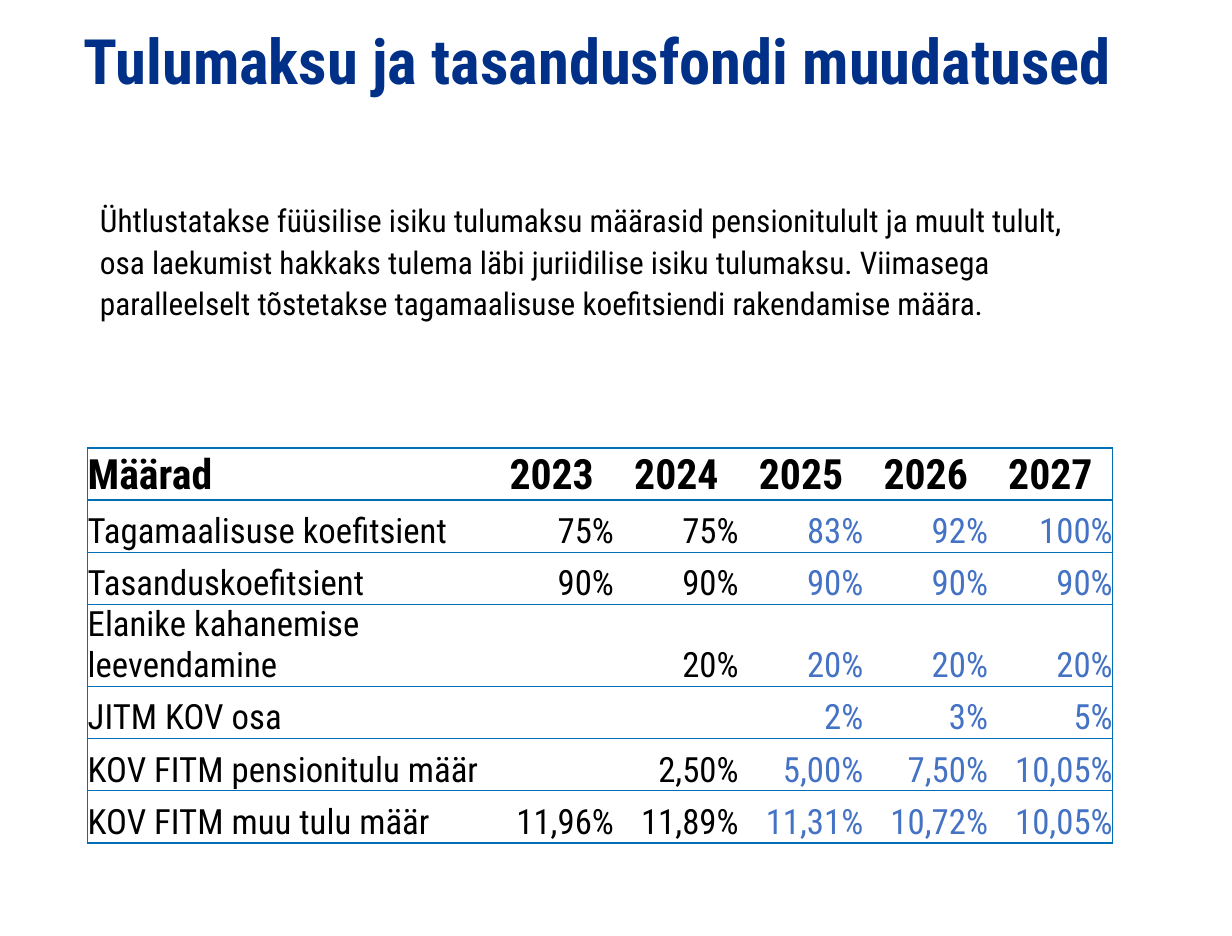
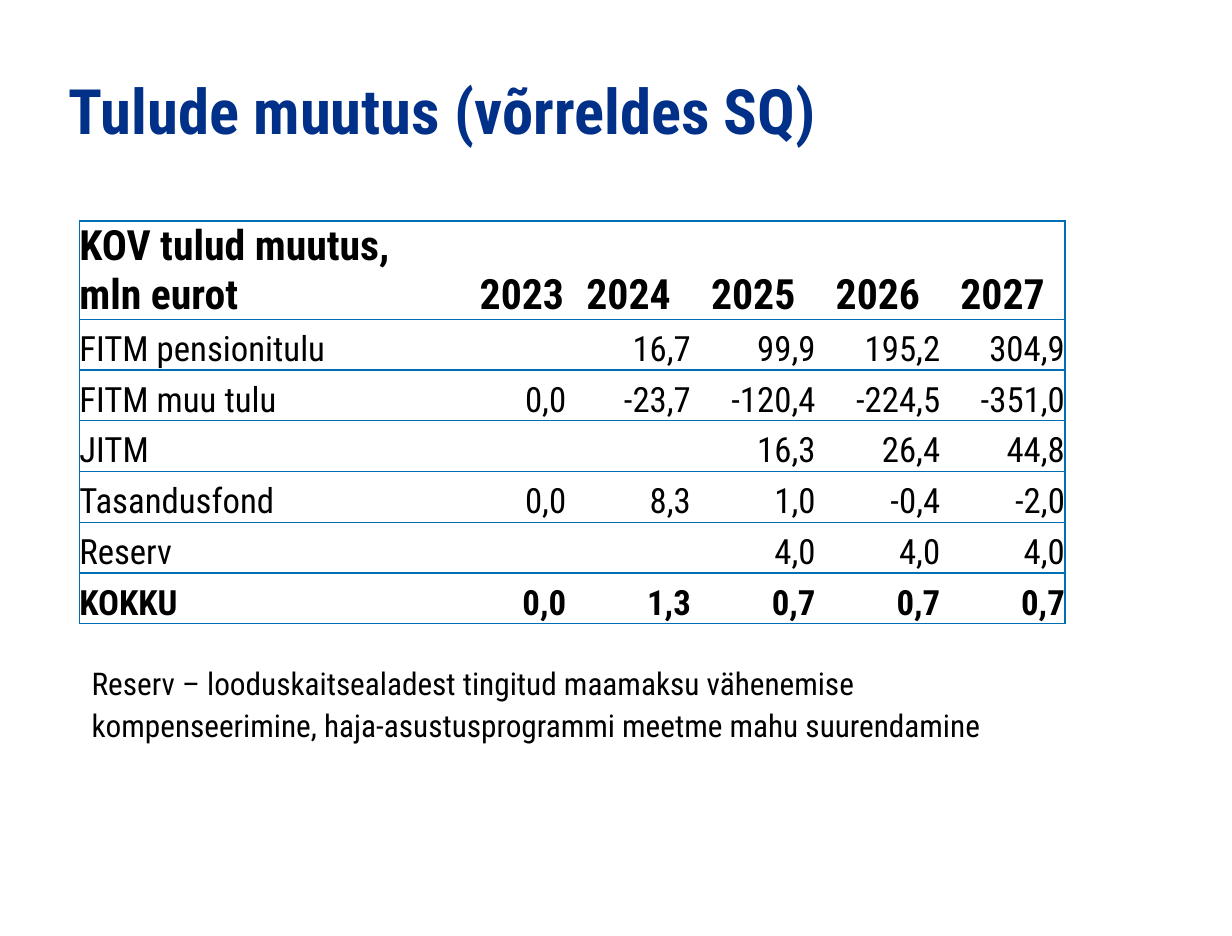
"""Build two slides on income tax and equalisation fund changes."""
from dataclasses import dataclass

from pptx import Presentation
from pptx.dml.color import RGBColor
from pptx.enum.text import MSO_ANCHOR, MSO_AUTO_SIZE, PP_ALIGN
from pptx.oxml.ns import qn
from pptx.slide import Slide
from pptx.table import _Cell
from pptx.text.text import TextFrame
from pptx.util import Emu, Pt
from lxml import etree

LEFT, CENTER, RIGHT = PP_ALIGN.LEFT, PP_ALIGN.CENTER, PP_ALIGN.RIGHT
TOP, BOTTOM = MSO_ANCHOR.TOP, MSO_ANCHOR.BOTTOM
NO_FIT, GROW = MSO_AUTO_SIZE.NONE, MSO_AUTO_SIZE.SHAPE_TO_FIT_TEXT
EMU_PER_PX = 3600
SLIDE_W, SLIDE_H = 2500, 1900
FONT = "Roboto Condensed"
NAVY, BLUE, RULE, BLACK, WHITE = "003087", "4472C4", "006EB5", "000000", "FFFFFF"
YEARS = ("2023", "2024", "2025", "2026", "2027")
TITLE_ONLY = 5


@dataclass(frozen=True)
class Box:
    """A rectangle in px."""
    x: int
    y: int
    w: int
    h: int


@dataclass(frozen=True)
class Style:
    """The look of a paragraph."""
    size: int
    color: str = BLACK
    bold: bool = False
    align: PP_ALIGN = LEFT
    spacing: float = 1.0


@dataclass(frozen=True)
class RateTable:
    """A table of yearly values with a label column."""
    x: int
    y: int
    columns: tuple[int, ...]
    row_height: int
    rows: tuple[tuple[str, ...], ...]
    forecast_from: int
    has_total: bool


@dataclass(frozen=True)
class Page:
    """The content of one slide."""
    title: str
    title_box: Box
    table: RateTable
    note: str
    note_box: Box


PAGES = (
    Page(
        "Tulumaksu ja tasandusfondi muudatused", Box(170, 50, 2200, 160),
        RateTable(178, 909, (815, 253, 253, 253, 253, 253), 106, (
            ("Määrad", *YEARS),
            ("Tagamaalisuse koefitsient", "75%", "75%", "83%", "92%", "100%"),
            ("Tasanduskoefitsient", "90%", "90%", "90%", "90%", "90%"),
            ("Elanike kahanemise leevendamine", "", "20%", "20%", "20%", "20%"),
            ("JITM KOV osa", "", "", "2%", "3%", "5%"),
            ("KOV FITM pensionitulu määr", "", "2,50%", "5,00%", "7,50%", "10,05%"),
            ("KOV FITM muu tulu määr", "11,96%", "11,89%", "11,31%", "10,72%", "10,05%"),
        ), forecast_from=3, has_total=False),
        "Ühtlustatakse füüsilise isiku tulumaksu määrasid pensionitulult ja muult "
        "tulult, osa laekumist hakkaks tulema läbi juriidilise isiku tulumaksu. "
        "Viimasega paralleelselt tõstetakse tagamaalisuse koefitsiendi rakendamise "
        "määra.",
        Box(178, 389, 2032, 274)),
    Page(
        "Tulude muutus (võrreldes SQ)", Box(140, 150, 2200, 160),
        RateTable(161, 449, (808, 180, 253, 253, 253, 253), 103, (
            ("KOV tulud muutus,\nmln eurot", *YEARS),
            ("FITM pensionitulu", "", "16,7", "99,9", "195,2", "304,9"),
            ("FITM muu tulu", "0,0", "-23,7", "-120,4", "-224,5", "-351,0"),
            ("JITM", "", "", "16,3", "26,4", "44,8"),
            ("Tasandusfond", "0,0", "8,3", "1,0", "-0,4", "-2,0"),
            ("Reserv", "", "", "4,0", "4,0", "4,0"),
            ("KOKKU", "0,0", "1,3", "0,7", "0,7", "0,7"),
        ), forecast_from=6, has_total=True),
        "Reserv – looduskaitsealadest tingitud maamaksu vähenemise kompenseerimine, "
        "haja-asustusprogrammi meetme mahu suurendamine",
        Box(161, 1329, 2060, 190)),
)


def px(n: int) -> Emu:
    """Turn px into EMU."""
    return Emu(n * EMU_PER_PX)


def rgb(value: str) -> RGBColor:
    """Turn a hex string into a colour."""
    return RGBColor.from_string(value)


def write(tf: TextFrame, text: str, style: Style) -> None:
    """Write one paragraph per line of text."""
    for i, line in enumerate(text.split("\n")):
        p = tf.add_paragraph() if i else tf.paragraphs[0]
        p.alignment = style.align
        p.line_spacing = style.spacing
        r = p.add_run()
        r.text = line
        r.font.name = FONT
        r.font.size = Pt(style.size)
        r.font.bold = style.bold
        r.font.color.rgb = rgb(style.color)


def add_title(s: Slide, text: str, box: Box) -> None:
    """Place and format the title placeholder."""
    sp = s.shapes.title
    sp.left, sp.top, sp.width, sp.height = map(px, (box.x, box.y, box.w, box.h))
    tf = sp.text_frame
    tf.margin_left = tf.margin_right = tf.margin_bottom = 0
    tf.margin_top = px(15)
    tf.vertical_anchor = TOP
    tf.word_wrap = True
    tf.auto_size = NO_FIT
    write(tf, text, Style(36, NAVY, bold=True, spacing=0.88))


def add_note(s: Slide, text: str, box: Box) -> None:
    """Add a wrapped text box."""
    sp = s.shapes.add_textbox(*map(px, (box.x, box.y, box.w, box.h)))
    tf = sp.text_frame
    tf.word_wrap = True
    tf.auto_size = GROW
    write(tf, text, Style(18, spacing=1.1))


def set_borders(cell: _Cell, sides: str) -> None:
    """Rule the given sides of a cell and clear the others."""
    tc_pr = cell._tc.get_or_add_tcPr()
    for side in "LRTB":
        ln = etree.SubElement(tc_pr, qn(f"a:ln{side}"), w=str(Pt(1)))
        if side in sides:
            fill = etree.SubElement(ln, qn("a:solidFill"))
            etree.SubElement(fill, qn("a:srgbClr"), val=RULE)
        else:
            etree.SubElement(ln, qn("a:noFill"))


def cell_style(table: RateTable, row: int, col: int) -> Style:
    """Choose the text style of a cell by its place."""
    if row == 0:
        return Style(24, bold=True, align=CENTER if col else LEFT)
    total = table.has_total and row == len(table.rows) - 1
    color = BLUE if col >= table.forecast_from else BLACK
    return Style(20, color, total, RIGHT if col else LEFT)


def add_rates(s: Slide, table: RateTable) -> None:
    """Add a table ruled by row with an outer frame."""
    n_rows, n_cols = len(table.rows), len(table.columns)
    frame = s.shapes.add_table(
        n_rows, n_cols, px(table.x), px(table.y),
        px(sum(table.columns)), px(n_rows * table.row_height))
    tbl = frame.table
    tbl.first_row = tbl.horz_banding = False
    for column, width in zip(tbl.columns, table.columns):
        column.width = px(width)
    for i, texts in enumerate(table.rows):
        tbl.rows[i].height = px(table.row_height)
        for j, text in enumerate(texts):
            cell = tbl.cell(i, j)
            cell.margin_left = cell.margin_right = 0
            cell.margin_top = cell.margin_bottom = 0
            cell.vertical_anchor = BOTTOM
            set_borders(cell, "TB" + {0: "L", n_cols - 1: "R"}.get(j, ""))
            cell.fill.solid()
            cell.fill.fore_color.rgb = rgb(WHITE)
            if text:
                write(cell.text_frame, text, cell_style(table, i, j))


def main() -> None:
    """Build and save the presentation."""
    prs = Presentation()
    prs.slide_width, prs.slide_height = px(SLIDE_W), px(SLIDE_H)
    for page in PAGES:
        s = prs.slides.add_slide(prs.slide_layouts[TITLE_ONLY])
        add_title(s, page.title, page.title_box)
        add_rates(s, page.table)
        add_note(s, page.note, page.note_box)
    prs.save("out.pptx")


if __name__ == "__main__":
    main()
